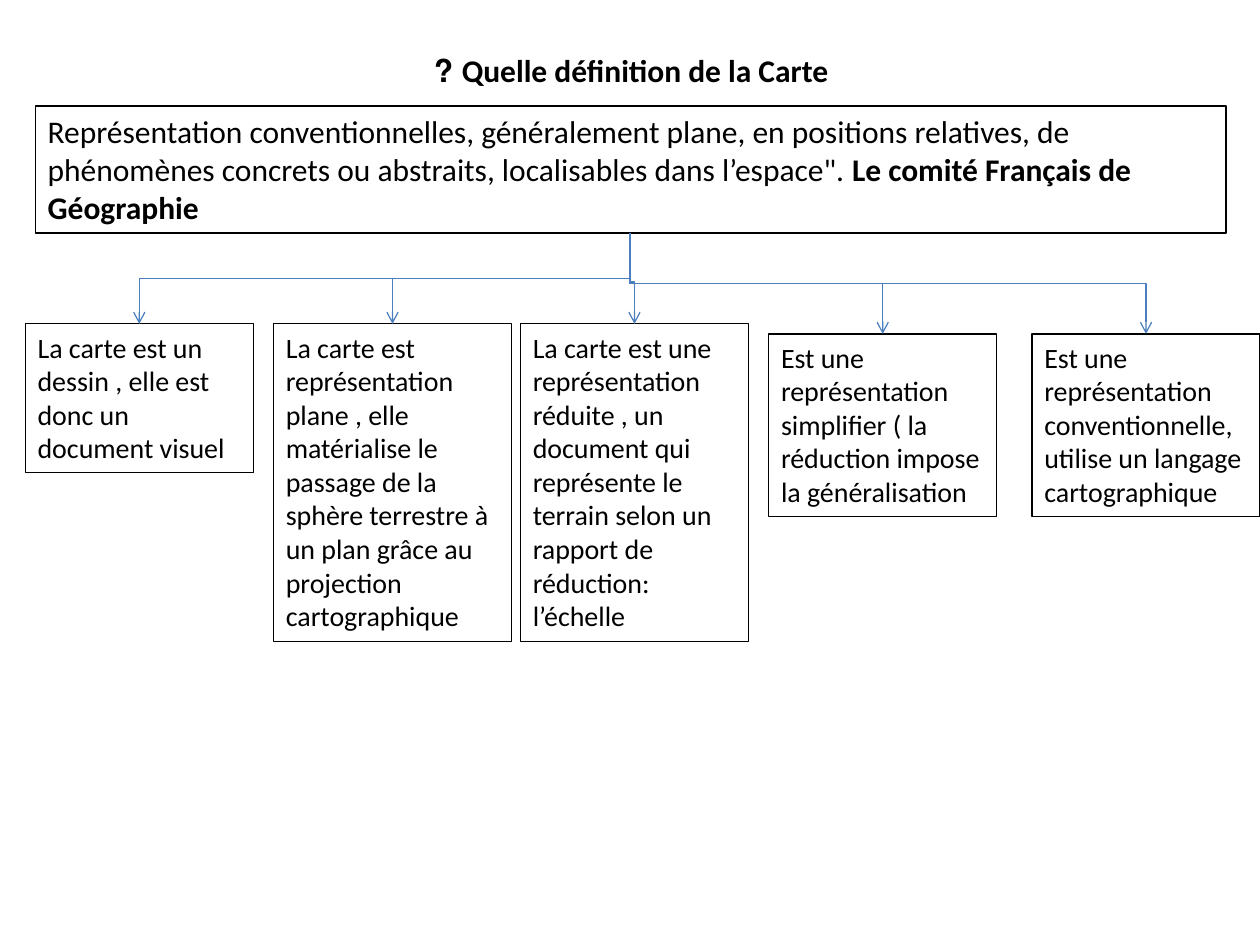
from dataclasses import dataclass

from lxml import etree
from pptx import Presentation
from pptx.dml.color import RGBColor
from pptx.enum.shapes import MSO_CONNECTOR
from pptx.enum.text import MSO_ANCHOR, MSO_AUTO_SIZE, PP_ALIGN
from pptx.oxml.ns import qn
from pptx.util import Inches, Pt

ELBOW = MSO_CONNECTOR.ELBOW
MIDDLE = MSO_ANCHOR.MIDDLE
FIT_SHAPE = MSO_AUTO_SIZE.SHAPE_TO_FIT_TEXT
CENTER = PP_ALIGN.CENTER


@dataclass(frozen=True)
class Theme:
    font: str = "Calibri"
    ink: RGBColor = RGBColor(0, 0, 0)
    arrow: RGBColor = RGBColor(0x4B, 0x7E, 0xBC)
    large: Pt = Pt(18)
    small: Pt = Pt(16)
    line: Pt = Pt(0.75)


THEME = Theme()
TRUNK_X, TRUNK_Y = 5, 1.85

DEFINITION = [
    ("Représentation conventionnelles, généralement plane, en positions relatives, "
     "de phénomènes concrets ou abstraits, localisables dans l’espace\".", False),
    (" Le comité Français de Géographie", True),
]

# left, top, width, height, bend of the arrow, text
IDEAS = [
    (0.2, 2.57, 1.81, 1.18, 0.5,
     "La carte est un dessin , elle est donc un document visuel"),
    (2.17, 2.57, 1.89, 2.52, 0.5,
     "La carte est représentation plane , elle matérialise le passage de la "
     "sphère terrestre à un plan grâce au projection cartographique"),
    (4.13, 2.57, 1.81, 2.52, 0.54,
     "La carte est une représentation réduite , un document qui représente le "
     "terrain selon un rapport de réduction: l’échelle"),
    (6.1, 2.65, 1.81, 1.45, 0.5,
     "Est une représentation simplifier ( la réduction impose la généralisation"),
    (8.19, 2.65, 1.81, 1.45, 0.5,
     "Est une représentation conventionnelle, utilise un langage cartographique"),
]


def add_text(page, left, top, width, height, spans, size):
    """Add a wrapped text box whose spans are (text, bold) pairs."""
    box = page.shapes.add_textbox(
        Inches(left), Inches(top), Inches(width), Inches(height))
    box.text_frame.word_wrap = True
    para = box.text_frame.paragraphs[0]
    for text, bold in spans:
        span = para.add_run()
        span.text = text
        span.font.name = THEME.font
        span.font.size = size
        span.font.bold = bold
        span.font.color.rgb = THEME.ink
    return box


def add_title(page):
    box = add_text(page, 0.51, 0.21, 9, 0.69,
                   [("Quelle définition de la Carte ?", True)], THEME.large)
    box.text_frame.vertical_anchor = MIDDLE
    para = box.text_frame.paragraphs[0]
    para.alignment = CENTER
    para._p.get_or_add_pPr().set("rtl", "1")


def add_framed_text(page, left, top, width, height, spans, size):
    box = add_text(page, left, top, width, height, spans, size)
    box.text_frame.auto_size = FIT_SHAPE
    box.line.color.rgb = THEME.ink
    box.line.width = THEME.line


def add_branch(page, end_x, end_y, bend):
    """Add an elbow arrow that leaves the trunk downwards, turns and enters from above."""
    drop, reach = end_y - TRUNK_Y, abs(end_x - TRUNK_X)
    mid_x, mid_y = (TRUNK_X + end_x) / 2, (TRUNK_Y + end_y) / 2
    # An elbow starts out horizontally, so it is laid flat and then turned.
    branch = page.shapes.add_connector(
        ELBOW,
        Inches(mid_x - drop / 2), Inches(mid_y - reach / 2),
        Inches(mid_x + drop / 2), Inches(mid_y + reach / 2))
    branch.line.color.rgb = THEME.arrow
    branch.line.width = THEME.line
    properties = branch.element.spPr
    frame = properties.find(qn("a:xfrm"))
    if end_x < TRUNK_X:
        frame.set("rot", str(90 * 60000))
    else:
        frame.set("rot", str(270 * 60000))
        frame.set("flipH", "1")
    guides = properties.find(qn("a:prstGeom")).find(qn("a:avLst"))
    etree.SubElement(guides, qn("a:gd"), name="adj1", fmla=f"val {round(bend * 100000)}")
    etree.SubElement(properties.find(qn("a:ln")), qn("a:tailEnd"), type="arrow")
    etree.SubElement(properties, qn("a:effectLst"))


def main():
    deck = Presentation()
    deck.slide_width, deck.slide_height = Inches(10), Inches(7.5)
    page = deck.slides.add_slide(deck.slide_layouts[6])
    add_title(page)
    add_framed_text(page, 0.28, 0.84, 9.45, 1.01, DEFINITION, THEME.large)
    for left, top, width, height, bend, text in IDEAS:
        add_framed_text(page, left, top, width, height, [(text, False)], THEME.small)
        add_branch(page, left + width / 2, top, bend)
    deck.save("out.pptx")


if __name__ == "__main__":
    main()
